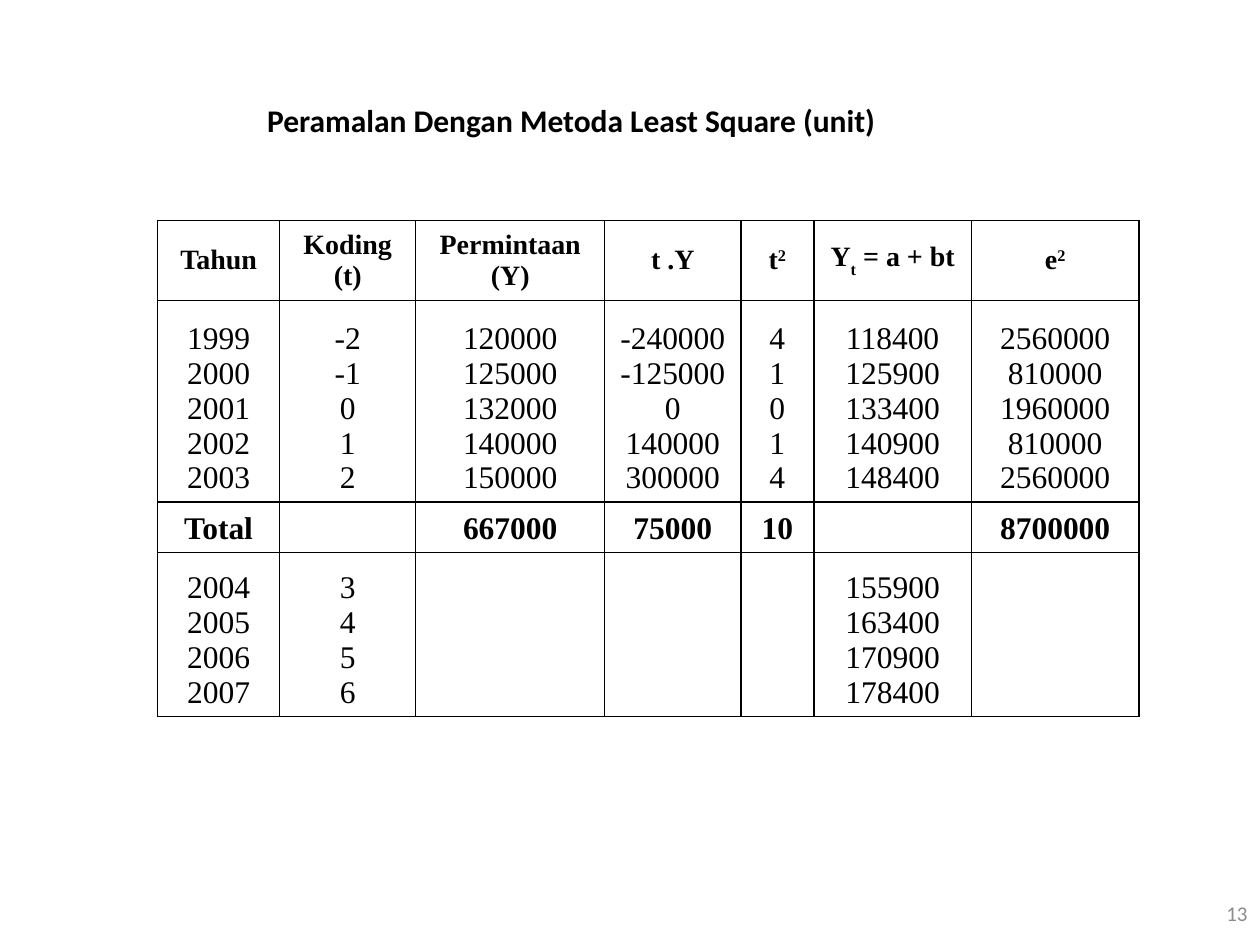
"""Build the least square forecast slide."""
from lxml.etree import SubElement
from pptx import Presentation
from pptx.dml.color import RGBColor
from pptx.enum.text import MSO_ANCHOR, PP_ALIGN
from pptx.oxml.ns import qn
from pptx.util import Inches, Pt

BLACK = RGBColor(0, 0, 0)
GRAY = RGBColor(0x8C, 0x8C, 0x8C)
SERIF = "Times New Roman"

TITLE = "Peramalan Dengan Metoda Least Square (unit)"
PAGE = "13"
HEADS = [
    "Tahun", "Koding (t)", "Permintaan (Y)", "t .Y",
    [("t", 0), ("2", 30)],
    [("Y", 0), ("t", -30), (" = a + bt", 0)],
    [("e", 0), ("2", 30)],
]
PAST = [
    ("1999", "-2", "120000", "-240000", "4", "118400", "2560000"),
    ("2000", "-1", "125000", "-125000", "1", "125900", "810000"),
    ("2001", "0", "132000", "0", "0", "133400", "1960000"),
    ("2002", "1", "140000", "140000", "1", "140900", "810000"),
    ("2003", "2", "150000", "300000", "4", "148400", "2560000"),
]
TOTAL = ("Total", "", "667000", "75000", "10", "", "8700000")
NEXT = [
    ("2004", "3", "", "", "", "155900", ""),
    ("2005", "4", "", "", "", "163400", ""),
    ("2006", "5", "", "", "", "170900", ""),
    ("2007", "6", "", "", "", "178400", ""),
]
BANDS = [
    dict(rows=[HEADS], high=0.63, size=16, bold=True, anchor=MSO_ANCHOR.MIDDLE),
    dict(rows=PAST, high=1.6, size=18, bold=False, anchor=MSO_ANCHOR.BOTTOM),
    dict(rows=[TOTAL], high=0.4, size=18, bold=True, anchor=MSO_ANCHOR.BOTTOM),
    dict(rows=NEXT, high=1.3, size=18, bold=False, anchor=MSO_ANCHOR.BOTTOM),
]
WIDTHS = [0.97, 1.08, 1.5, 1.08, 0.58, 1.25, 1.33]


def write(frame, lines, size=18, bold=False, font="Calibri", color=BLACK,
          align=PP_ALIGN.CENTER):
    """Write each line as a paragraph of plain or raised and lowered runs."""
    for i, line in enumerate(lines):
        para = frame.paragraphs[0] if i == 0 else frame.add_paragraph()
        para.alignment = align
        for text, base in [(line, 0)] if isinstance(line, str) else line:
            run = para.add_run()
            run.text = text
            run.font.size = Pt(size)
            run.font.bold = bold
            run.font.name = font
            run.font.color.rgb = color
            if base:
                run.font._element.set("baseline", str(base * 1000))


def label(slide, text, box, wrap=True, **style):
    """Add a text box with one middle-anchored line."""
    frame = slide.shapes.add_textbox(*map(Inches, box)).text_frame
    frame.word_wrap = wrap
    frame.vertical_anchor = MSO_ANCHOR.MIDDLE
    write(frame, [text], **style)


def frame_cell(cell):
    """Draw thin black borders round a cell and clear its fill."""
    props = cell._tc.get_or_add_tcPr()
    for side in ("a:lnL", "a:lnR", "a:lnT", "a:lnB"):
        line = SubElement(props, qn(side), w=str(Pt(1)))
        fill = SubElement(line, qn("a:solidFill"))
        SubElement(fill, qn("a:srgbClr"), val=str(BLACK))
    cell.fill.background()


def grid(slide):
    """Add the forecast table, one table row for each band."""
    high = sum(band["high"] for band in BANDS)
    table = slide.shapes.add_table(
        len(BANDS), len(WIDTHS), Inches(1.25), Inches(1.75),
        Inches(sum(WIDTHS)), Inches(high)).table
    table.first_row = table.horz_banding = False
    for col, wide in zip(table.columns, WIDTHS):
        col.width = Inches(wide)
    for row, band in zip(table.rows, BANDS):
        row.height = Inches(band["high"])
        for cell, lines in zip(row.cells, zip(*band["rows"])):
            cell.vertical_anchor = band["anchor"]
            cell.margin_left = cell.margin_right = Inches(0.09)
            cell.margin_top = cell.margin_bottom = Inches(0.05)
            frame_cell(cell)
            if any(lines):
                write(cell.text_frame, lines, size=band["size"],
                      bold=band["bold"], font=SERIF)


def main():
    """Make the slide and save it."""
    deck = Presentation()
    deck.slide_width, deck.slide_height = Inches(10), Inches(7.5)
    slide = deck.slides.add_slide(deck.slide_layouts[6])
    label(slide, PAGE, (7.92, 7, 2.08, 0.5), size=12, color=GRAY,
          align=PP_ALIGN.RIGHT)
    label(slide, TITLE, (2, 0.75, 5.07, 0.4), wrap=False, bold=True)
    grid(slide)
    deck.save("out.pptx")


if __name__ == "__main__":
    main()
